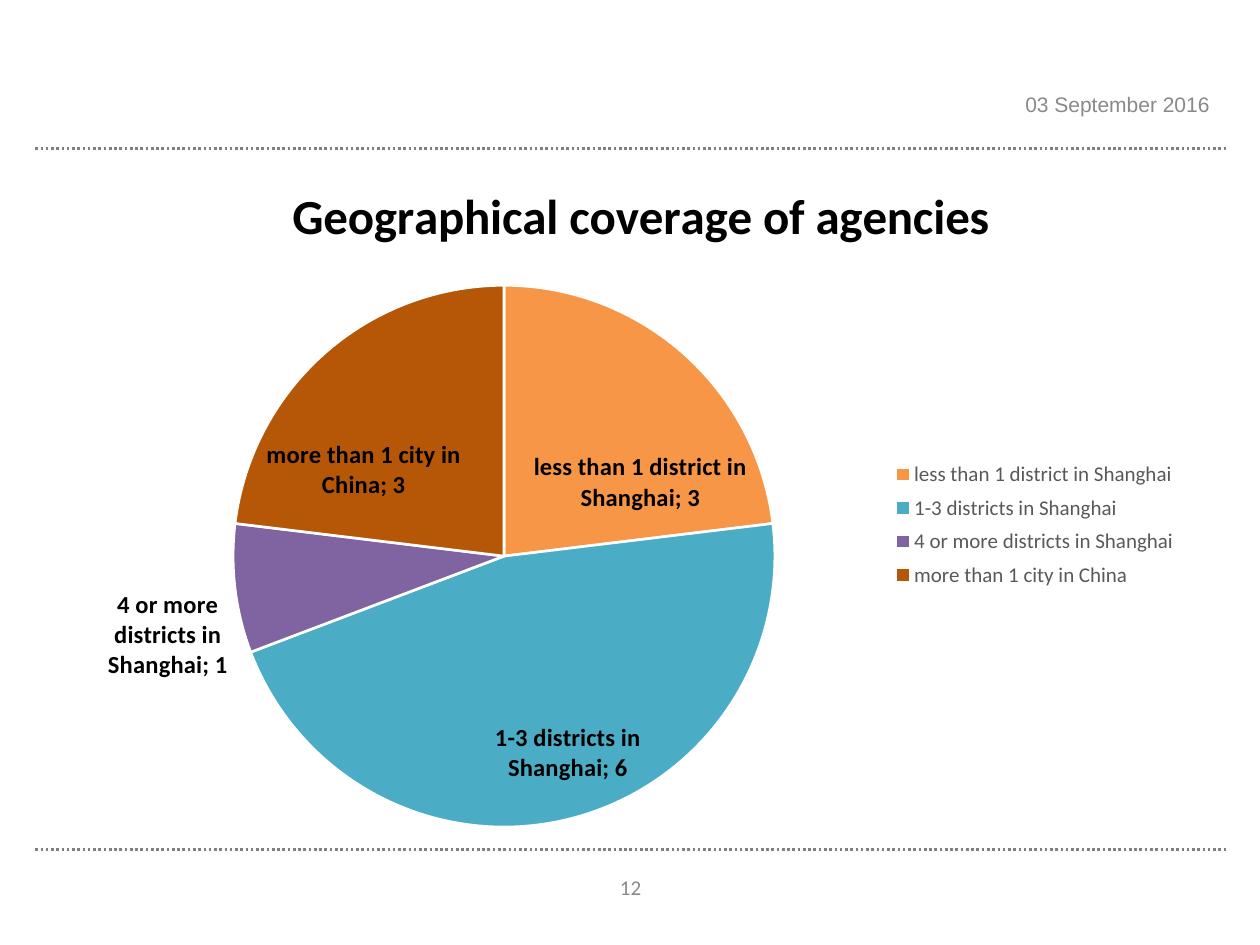
from dataclasses import dataclass

import pptx
import pptx.chart.data
import pptx.dml.color
import pptx.enum.chart
import pptx.enum.dml
import pptx.enum.shapes
import pptx.enum.text
import pptx.oxml
import pptx.oxml.ns
import pptx.util
from pptx.util import Inches

COLOURS = {
    "rule": "808080",
    "footer": "898989",
    "legend": "595959",
    "text": "000000",
    "white": "FFFFFF",
    "orange": "F79646",
    "teal": "4BACC6",
    "purple": "8064A2",
    "brown": "B65708",
}
LabelPosition = pptx.enum.chart.XL_DATA_LABEL_POSITION
CHART_WIDTH, CHART_HEIGHT = 9.42, 5.59


@dataclass
class Slice:
    category: str
    agencies: int
    colour: str
    position: LabelPosition
    label_shift: tuple[float, float] | None = None


@dataclass
class Caption:
    text: str
    bounds: tuple[float, float, float, float]
    font_name: str
    alignment: pptx.enum.text.PP_ALIGN
    anchor: pptx.enum.text.MSO_ANCHOR


SLICES = [
    Slice("less than 1 district in Shanghai", 3, "orange", LabelPosition.CENTER, (0.37, 0.22)),
    Slice("1-3 districts in Shanghai", 6, "teal", LabelPosition.CENTER, (0.25, 0.52)),
    Slice("4 or more districts in Shanghai", 1, "purple", LabelPosition.OUTSIDE_END),
    Slice("more than 1 city in China", 3, "brown", LabelPosition.CENTER, (-0.4, 0.12)),
]
CAPTIONS = [
    Caption("12", (4.61, 6.84, 0.79, 0.4), "Calibri",
            pptx.enum.text.PP_ALIGN.CENTER, pptx.enum.text.MSO_ANCHOR.MIDDLE),
    Caption("03 September 2016", (7.37, 0.68, 2.33, 0.4), "Arial",
            pptx.enum.text.PP_ALIGN.RIGHT, pptx.enum.text.MSO_ANCHOR.TOP),
]
RULE_HEIGHTS = (1.18, 6.74)


def rgb(name: str) -> pptx.dml.color.RGBColor:
    return pptx.dml.color.RGBColor.from_string(COLOURS[name])


def style_font(font, size: float, colour: str, bold: bool = False, name: str = "Calibri") -> None:
    font.name, font.size, font.bold = name, pptx.util.Pt(size), bold
    font.color.rgb = rgb(colour)


def chart_element(tag: str, content: str):
    return pptx.oxml.parse_xml(
        f'<c:{tag} {pptx.oxml.ns.nsdecls("c")}>{content}</c:{tag}>')


def set_layout(parent, index: int, x: float, y: float,
               size: tuple[float, float] | None = None,
               from_edge: bool = True, inner: bool = False) -> None:
    """Place a chart part, in inches from the chart's corner or from its default place."""
    values = {"layoutTarget": "inner"} if inner else {}
    if from_edge:
        values |= {"xMode": "edge", "yMode": "edge"}
    values |= {"x": x / CHART_WIDTH, "y": y / CHART_HEIGHT}
    if size:
        values |= {"w": size[0] / CHART_WIDTH, "h": size[1] / CHART_HEIGHT}
    parts = "".join(f'<c:{tag} val="{value}"/>' for tag, value in values.items())
    for old_layout in parent.xpath("c:layout"):
        parent.remove(old_layout)
    parent.insert(index, chart_element("layout", f"<c:manualLayout>{parts}</c:manualLayout>"))


def add_rule(slide, y: float) -> None:
    rule = slide.shapes.add_connector(
        pptx.enum.shapes.MSO_CONNECTOR.STRAIGHT, Inches(0.28), Inches(y), Inches(9.73), Inches(y))
    rule.line.color.rgb = rgb("rule")
    rule.line.width = pptx.util.Pt(1.5)
    rule.line.dash_style = pptx.enum.dml.MSO_LINE.ROUND_DOT
    rule._element.spPr.append(
        pptx.oxml.parse_xml(f'<a:effectLst {pptx.oxml.ns.nsdecls("a")}/>'))


def add_caption(slide, caption: Caption) -> None:
    box = slide.shapes.add_textbox(*map(Inches, caption.bounds))
    box.text_frame.word_wrap = True
    box.text_frame.vertical_anchor = caption.anchor
    para = box.text_frame.paragraphs[0]
    para.text, para.alignment = caption.text, caption.alignment
    style_font(para.font, 12, "footer", name=caption.font_name)


def style_slice(series, index: int, part: Slice) -> None:
    point = series.points[index]
    point.format.fill.solid()
    point.format.fill.fore_color.rgb = rgb(part.colour)
    point.format.line.color.rgb = rgb("white")
    point.format.line.width = pptx.util.Pt(1.5)
    style_font(point.data_label.font, 14, "text", bold=True)
    point.data_label.position = part.position

    label = series._element.xpath(f'c:dLbls/c:dLbl[c:idx/@val="{index}"]')[0]
    if part.label_shift:
        set_layout(label, 1, *part.label_shift, from_edge=False)
    label.xpath("c:showCatName")[0].set("val", "1")
    separator = chart_element("separator", "; ")
    label.xpath("c:showPercent")[0].addnext(separator)
    for bubble_flag in label.xpath("c:showBubbleSize"):
        separator.addprevious(bubble_flag)


def add_coverage_chart(slide) -> None:
    data = pptx.chart.data.CategoryChartData()
    data.categories = [part.category for part in SLICES]
    data.add_series("Series 1", [part.agencies for part in SLICES])
    chart = slide.shapes.add_chart(
        pptx.enum.chart.XL_CHART_TYPE.PIE, Inches(0.3), Inches(1.16),
        Inches(CHART_WIDTH), Inches(CHART_HEIGHT), data).chart
    style_font(chart.font, 10, "text")

    title = chart.chart_title
    title.text_frame.text = "Geographical coverage of agencies"
    style_font(title.text_frame.paragraphs[0].font, 28, "text", bold=True)
    set_layout(title._element, 1, 1.95, 0.22)

    chart.has_legend = True
    chart.legend.position = pptx.enum.chart.XL_LEGEND_POSITION.RIGHT
    chart.legend.include_in_layout = False
    style_font(chart.legend.font, 12, "legend")
    set_layout(chart.legend._element, 1, 6.69, 2.44, size=(2.45, 1.13))

    plot = chart.plots[0]
    plot.vary_by_categories = True
    for index, part in enumerate(SLICES):
        style_slice(plot.series[0], index, part)
    plot_area = chart._chartSpace.xpath("c:chart/c:plotArea")[0]
    set_layout(plot_area, 0, 1.55, 1.1, size=(4.3, 4.31), inner=True)


def main() -> None:
    deck = pptx.Presentation()
    deck.slide_width, deck.slide_height = Inches(10), Inches(7.5)
    slide = deck.slides.add_slide(deck.slide_layouts[6])
    for y in RULE_HEIGHTS:
        add_rule(slide, y)
    for caption in CAPTIONS:
        add_caption(slide, caption)
    add_coverage_chart(slide)
    deck.save("out.pptx")


if __name__ == "__main__":
    main()
